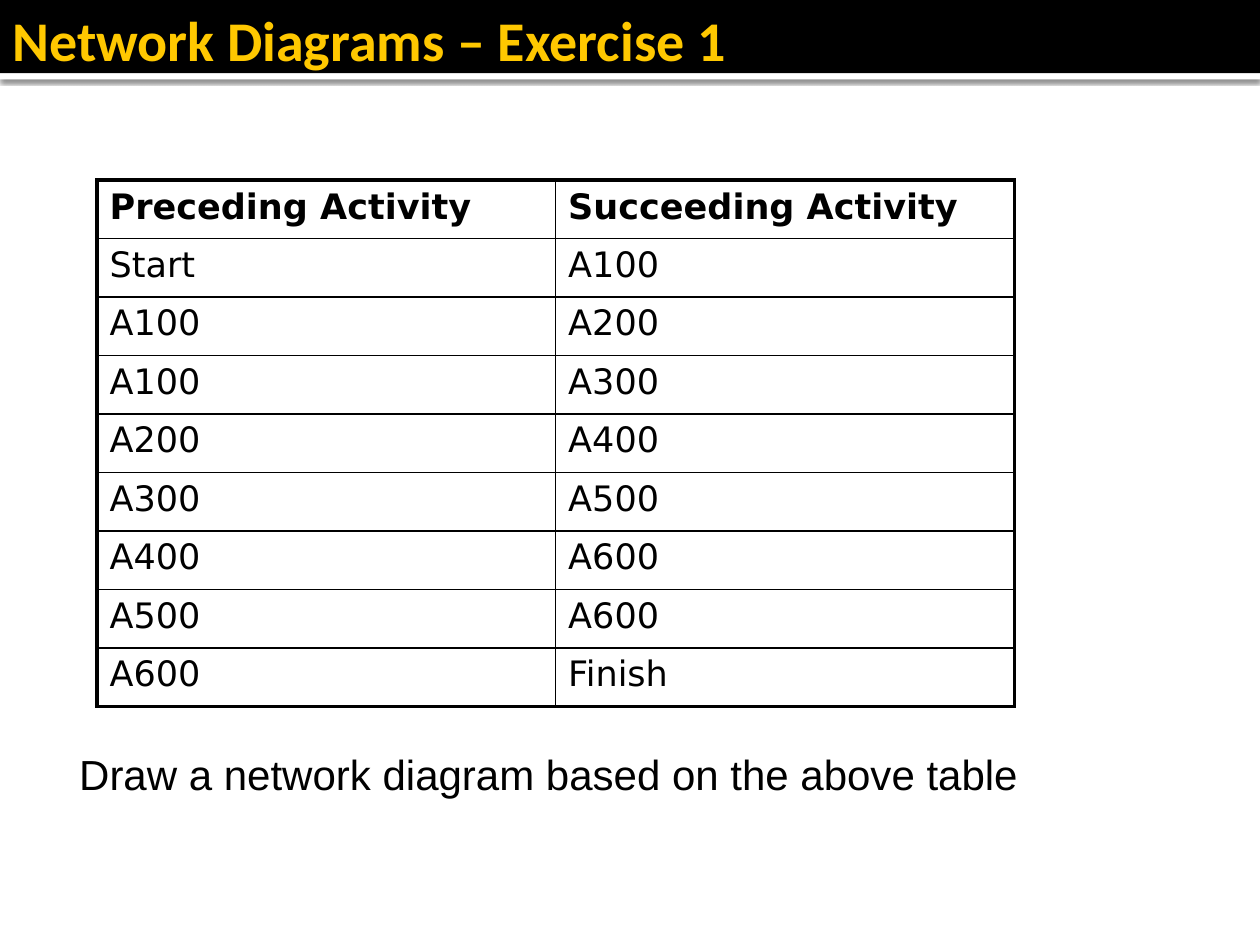
"""Build the network diagram exercise slide with its activity table."""
from lxml.etree import SubElement
from pptx import Presentation
from pptx.dml.color import RGBColor
from pptx.enum.shapes import MSO_SHAPE
from pptx.enum.text import MSO_ANCHOR, MSO_AUTO_SIZE
from pptx.oxml.ns import qn
from pptx.util import Inches, Pt


def rgb(value):
    return RGBColor.from_string(value)


def style(p, font, size, color, bold=False):
    f = p.runs[0].font
    f.name, f.size, f.bold = font, Pt(size), bold
    f.color.rgb = rgb(color)


prs = Presentation()
prs.slide_width, prs.slide_height = Inches(10), Inches(7.5)
s = prs.slides.add_slide(prs.slide_layouts[6])

for top, height, color in [(0.58, 0.05, "FFFFFF"), (0, 0.58, "000000")]:
    sp = s.shapes.add_shape(MSO_SHAPE.RECTANGLE, 0, Inches(top), Inches(10), Inches(height))
    sp.shadow.inherit = False
    sp.fill.solid()
    sp.fill.fore_color.rgb = rgb(color)
    sp.line.fill.background()
    if color == "FFFFFF":
        effects = sp._element.spPr.find(qn("a:effectLst"))
        shadow = SubElement(effects, qn("a:outerShdw"), blurRad=str(Pt(2.5)),
                            dist=str(Pt(0.8)), dir="5400000", algn="tl", rotWithShape="0")
        clr = SubElement(shadow, qn("a:srgbClr"), val="000000")
        SubElement(clr, qn("a:alpha"), val="60000")

rows = [
    ("Preceding Activity", "Succeeding Activity"),
    ("Start", "A100"),
    ("A100", "A200"),
    ("A100", "A300"),
    ("A200", "A400"),
    ("A300", "A500"),
    ("A400", "A600"),
    ("A500", "A600"),
    ("A600", "Finish"),
]
last = len(rows) - 1
table = s.shapes.add_table(len(rows), 2, Inches(0.77), Inches(1.43), Inches(7.28), Inches(4.18)).table
table.horz_banding = False
for i, row in enumerate(rows):
    for j, text in enumerate(row):
        cell = table.cell(i, j)
        p = cell.text_frame.paragraphs[0]
        p.text = text
        style(p, "DejaVu Sans", 20, "000000", i == 0)
        spacing = SubElement(p._p.get_or_add_pPr(), qn("a:spcBef"))
        SubElement(spacing, qn("a:spcPct"), val="20000")
        tcPr = cell._tc.get_or_add_tcPr()
        outer = {"L": j == 0, "R": j == 1, "T": i == 0, "B": i == last}
        for side, edge in outer.items():
            ln = SubElement(tcPr, qn(f"a:ln{side}"), w=str(Pt(2.25 if edge else 1)))
            fill = SubElement(ln, qn("a:solidFill"))
            SubElement(fill, qn("a:srgbClr"), val="000000")
        cell.fill.background()

tb = s.shapes.add_textbox(Inches(0.53), Inches(5.89), Inches(8.12), Inches(0.5))
tf = tb.text_frame
tf.word_wrap = False
tf.auto_size = MSO_AUTO_SIZE.SHAPE_TO_FIT_TEXT
tf.text = "Draw a network diagram based on the above table"
style(tf.paragraphs[0], "Arial", 24, "000000")

title = s.shapes.add_textbox(0, 0, Inches(10), Inches(0.62))
tf = title.text_frame
tf.word_wrap = True
tf.vertical_anchor = MSO_ANCHOR.MIDDLE
tf.margin_left = Inches(0.1)
tf.margin_right = tf.margin_top = tf.margin_bottom = Inches(0.05)
tf.text = "Network Diagrams – Exercise 1"
style(tf.paragraphs[0], "Calibri", 32, "FFC800", True)

prs.save("out.pptx")
